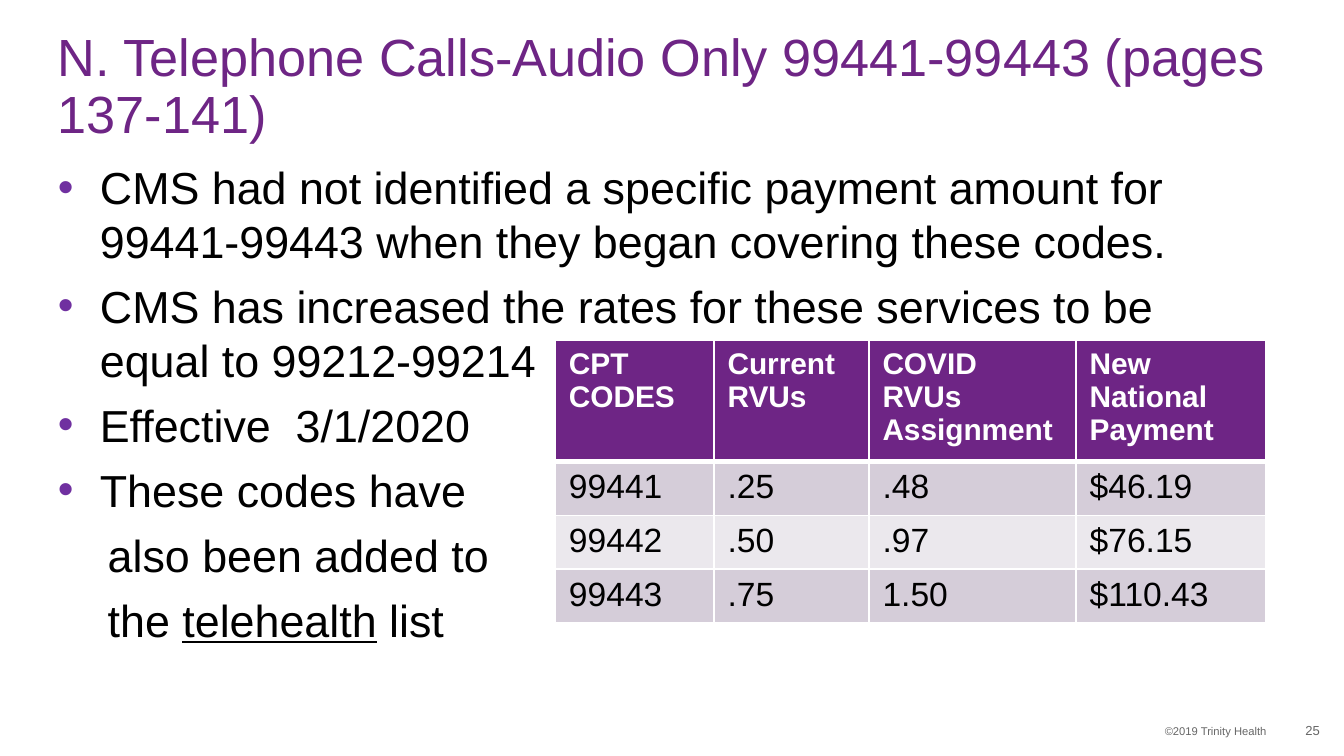
"""Build the slide on telephone call codes and their new payment rates."""

from dataclasses import dataclass

from lxml import etree
from pptx import Presentation
from pptx.dml.color import RGBColor
from pptx.enum.text import MSO_ANCHOR, PP_ALIGN
from pptx.oxml.ns import qn
from pptx.util import Pt

TOP, MIDDLE = MSO_ANCHOR.TOP, MSO_ANCHOR.MIDDLE
LEFT, RIGHT = PP_ALIGN.LEFT, PP_ALIGN.RIGHT


@dataclass(frozen=True)
class Theme:
    font: str = "Arial"
    purple: str = "6E2585"
    bullet: str = "7030A0"
    black: str = "000000"
    white: str = "FFFFFF"
    grey: str = "666666"
    bands: tuple[str, str] = ("D5CDD9", "EBE8ED")
    title_size: float = 28
    body_size: float = 24
    header_size: float = 16
    cell_size: float = 18
    footer_size: float = 6
    number_size: float = 7


@dataclass(frozen=True)
class TextBox:
    box: tuple[float, float, float, float]
    insets: tuple[float, float, float, float]
    size: float
    color: str
    text: str = ""
    anchor: int = TOP
    align: int = LEFT
    line_spacing: float = 1.0


@dataclass(frozen=True)
class BodyLine:
    phrases: tuple[str, ...]
    bulleted: bool = True
    underlined: str = ""


THEME = Theme()
HANGING_INDENT = 22.5
PLAIN_INDENT = 26.7
THIN_BORDER, THICK_BORDER = 1, 3

TITLE = TextBox((31, 27.3, 648, 39.6), (0, 0, 0, 0), THEME.title_size, THEME.purple,
                "N. Telephone Calls-Audio Only 99441-99443 (pages 137-141)",
                anchor=MIDDLE, line_spacing=0.9)
BODY = TextBox((31, 78.5, 648.7, 283.7), (0, 7.2, 7.2, 3.6), THEME.body_size, THEME.black)
FOOTER = TextBox((383.8, 384.5, 301.7, 14.4), (7.2, 3.6, 7.2, 3.6), THEME.footer_size,
                 THEME.grey, "©2019 Trinity Health", align=RIGHT)
PAGE_NUMBER = TextBox((675.4, 380.2, 31.7, 21.6), (7.2, 3.6, 0, 3.6), THEME.number_size,
                      THEME.grey, "25", anchor=MIDDLE, align=RIGHT)

BODY_LINES = (
    BodyLine(("CMS had not identified a specific payment amount for "
              "99441-99443 when they began covering these codes.",)),
    BodyLine(("CMS has increased the rates for these services to be "
              "equal to 99212-99214",)),
    BodyLine(("Effective  3/1/2020",)),
    BodyLine(("These codes have",)),
    BodyLine(("also been added to",), bulleted=False),
    BodyLine(("the ", "telehealth", " list"), bulleted=False, underlined="telehealth"),
)

TABLE_LEFT, TABLE_TOP = 297.6, 182.5
COLUMN_WIDTHS = (85, 83, 111, 101.6)
ROW_HEIGHTS = (60.5, 27.3, 27.3, 27.3)
TABLE_ROWS = (
    ("CPT CODES", "Current RVUs", "COVID RVUs Assignment", "New National Payment"),
    ("99441", ".25", ".48", "$46.19"),
    ("99442", ".50", ".97", "$76.15"),
    ("99443", ".75", "1.50", "$110.43"),
)


def style_font(font, size: float, color: str, bold: bool = False) -> None:
    """Apply the theme font with a size, colour and weight."""
    font.name = THEME.font
    font.size = Pt(size)
    font.bold = bold
    font.color.rgb = RGBColor.from_string(color)


def add_text_box(slide, spec: TextBox):
    """Add a wrapped text box and return its text frame."""
    text_frame = slide.shapes.add_textbox(*map(Pt, spec.box)).text_frame
    text_frame.word_wrap = True
    text_frame.vertical_anchor = spec.anchor
    (text_frame.margin_left, text_frame.margin_top,
     text_frame.margin_right, text_frame.margin_bottom) = map(Pt, spec.insets)
    text_frame.text = spec.text
    paragraph = text_frame.paragraphs[0]
    paragraph.alignment = spec.align
    paragraph.line_spacing = spec.line_spacing
    for run in paragraph.runs:
        style_font(run.font, spec.size, spec.color)
    return text_frame


def set_indent(paragraph, bulleted: bool) -> None:
    """Indent a paragraph, with a coloured hanging bullet if wanted."""
    properties = paragraph._p.get_or_add_pPr()
    if not bulleted:
        properties.set("marL", str(Pt(PLAIN_INDENT)))
        properties.set("indent", "0")
        etree.SubElement(properties, qn("a:buNone"))
        return
    properties.set("marL", str(Pt(HANGING_INDENT)))
    properties.set("indent", str(-Pt(HANGING_INDENT)))
    color = etree.SubElement(properties, qn("a:buClr"))
    etree.SubElement(color, qn("a:srgbClr"), val=THEME.bullet)
    etree.SubElement(properties, qn("a:buFont"), typeface=THEME.font)
    etree.SubElement(properties, qn("a:buChar"), char="•")


def add_body(slide, spec: TextBox, lines: tuple[BodyLine, ...]) -> None:
    """Add the body text, one paragraph per line."""
    text_frame = add_text_box(slide, spec)
    for index, line in enumerate(lines):
        paragraph = text_frame.add_paragraph() if index else text_frame.paragraphs[0]
        set_indent(paragraph, line.bulleted)
        paragraph.space_after = Pt(6)
        for phrase in line.phrases:
            run = paragraph.add_run()
            run.text = phrase
            style_font(run.font, spec.size, spec.color)
            if phrase == line.underlined:
                run.font.underline = True


def set_borders(cell, top: float, bottom: float) -> None:
    """Draw white borders around a cell."""
    properties = cell._tc.get_or_add_tcPr()
    widths = {"a:lnL": THIN_BORDER, "a:lnR": THIN_BORDER, "a:lnT": top, "a:lnB": bottom}
    for tag, width in widths.items():
        line = etree.SubElement(properties, qn(tag), w=str(Pt(width)))
        fill = etree.SubElement(line, qn("a:solidFill"))
        etree.SubElement(fill, qn("a:srgbClr"), val=THEME.white)


def fill_cell(cell, text: str, row: int) -> None:
    """Write and style a cell according to its row."""
    header = row == 0
    set_borders(cell, THICK_BORDER if row == 1 else THIN_BORDER,
                THICK_BORDER if header else THIN_BORDER)
    cell.fill.solid()
    color = THEME.purple if header else THEME.bands[(row - 1) % 2]
    cell.fill.fore_color.rgb = RGBColor.from_string(color)
    cell.text_frame.text = text
    style_font(cell.text_frame.paragraphs[0].runs[0].font,
               THEME.header_size if header else THEME.cell_size,
               THEME.white if header else THEME.black, bold=header)


def add_rate_table(slide) -> None:
    """Add the table of codes, RVUs and payments."""
    table = slide.shapes.add_table(
        len(TABLE_ROWS), len(COLUMN_WIDTHS), Pt(TABLE_LEFT), Pt(TABLE_TOP),
        Pt(sum(COLUMN_WIDTHS)), Pt(sum(ROW_HEIGHTS))).table
    for column, width in zip(table.columns, COLUMN_WIDTHS):
        column.width = Pt(width)
    for row, (height, texts) in enumerate(zip(ROW_HEIGHTS, TABLE_ROWS)):
        table.rows[row].height = Pt(height)
        for column, text in enumerate(texts):
            fill_cell(table.cell(row, column), text, row)


def main() -> None:
    """Build and save the presentation."""
    presentation = Presentation()
    presentation.slide_width, presentation.slide_height = Pt(720), Pt(405)
    slide = presentation.slides.add_slide(presentation.slide_layouts[6])
    add_body(slide, BODY, BODY_LINES)
    for spec in (TITLE, FOOTER, PAGE_NUMBER):
        add_text_box(slide, spec)
    add_rate_table(slide)
    presentation.save("out.pptx")


if __name__ == "__main__":
    main()
